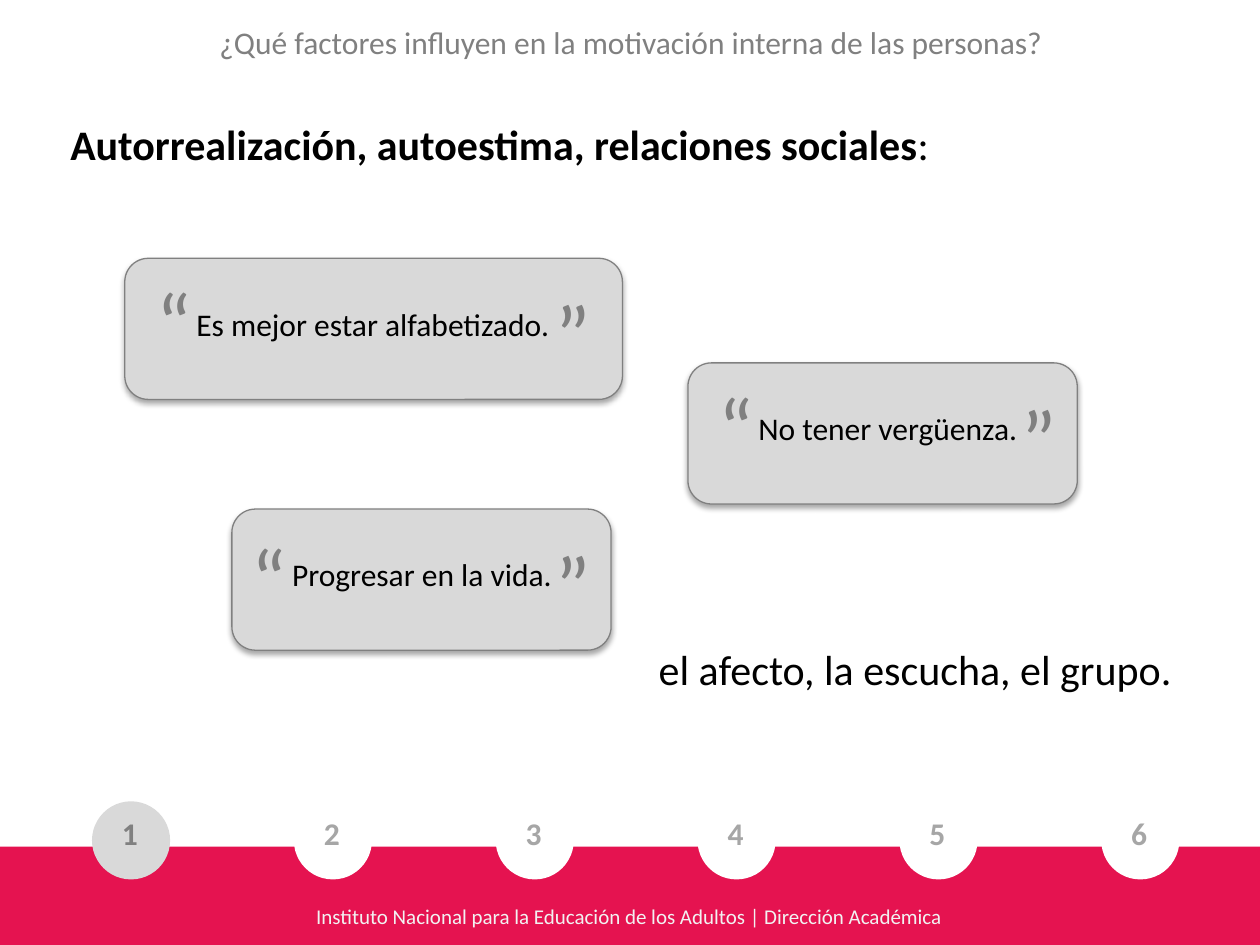
from lxml import etree
from pptx import Presentation
from pptx.dml.color import RGBColor
from pptx.enum.shapes import MSO_SHAPE
from pptx.enum.text import MSO_ANCHOR, MSO_AUTO_SIZE, PP_ALIGN
from pptx.oxml.ns import qn
from pptx.util import Pt

PX = 9144  # 100 px to the inch
RECTANGLE = MSO_SHAPE.RECTANGLE
OVAL = MSO_SHAPE.OVAL
ROUNDED = MSO_SHAPE.ROUNDED_RECTANGLE
LEFT, CENTER = PP_ALIGN.LEFT, PP_ALIGN.CENTER
TOP = MSO_ANCHOR.TOP
NO_AUTOFIT = MSO_AUTO_SIZE.NONE

FONT = "Calibri"
BLACK, WHITE = "000000", "FFFFFF"
GRAY, LIGHT_GRAY, PALE_GRAY = "808080", "D9D9D9", "A6A6A6"
CRIMSON, OFF_WHITE = "E51350", "F2F2F2"


def color(value):
    return RGBColor.from_string(value)


def emu(*lengths):
    return [round(length * PX) for length in lengths]


def write(shape, runs, size, text_color, align=LEFT, wrap=False):
    """Fill a shape with one paragraph of (text, bold) runs."""
    frame = shape.text_frame
    frame.word_wrap = wrap
    frame.auto_size = NO_AUTOFIT
    frame.vertical_anchor = TOP
    paragraph = frame.paragraphs[0]
    paragraph.alignment = align
    for text, bold in runs:
        run = paragraph.add_run()
        run.text = text
        run.font.name = FONT
        run.font.size = Pt(size)
        run.font.bold = bold
        run.font.color.rgb = color(text_color)


def add_text(slide, box, text, size, text_color, bold=False, align=LEFT, wrap=False):
    text_box = slide.shapes.add_textbox(*emu(*box))
    write(text_box, [(text, bold)], size, text_color, align, wrap)


def add_shape(slide, kind, box, fill):
    shape = slide.shapes.add_shape(kind, *emu(*box))
    shape.shadow.inherit = False
    shape.fill.solid()
    shape.fill.fore_color.rgb = color(fill)
    shape.line.fill.background()
    return shape


def add_soft_shadow(shape):
    effects = shape.element.spPr.find(qn("a:effectLst"))
    shadow = etree.SubElement(effects, qn("a:outerShdw"), blurRad="40000",
                              dist="23000", dir="5400000", rotWithShape="0")
    shade = etree.SubElement(shadow, qn("a:srgbClr"), val=BLACK)
    etree.SubElement(shade, qn("a:alpha"), val="35000")


def build_title(slide, box):
    title = slide.shapes.title
    title.left, title.top, title.width, title.height = emu(*box)
    write(title, [("¿Qué factores influyen en la motivación interna de las personas?", False)],
          18, GRAY)


def build_heading(slide, box):
    heading = slide.shapes.add_textbox(*emu(*box))
    write(heading, [("Autorrealización, autoestima, relaciones sociales", True), (":", False)],
          24, BLACK, wrap=True)


def build_quote(slide, box, text, text_offset, text_width, mark_offset):
    """Shadowed card with a sentence between two large quotation marks."""
    left, top = box[:2]
    card = add_shape(slide, ROUNDED, box, LIGHT_GRAY)
    card.line.color.rgb = color(GRAY)
    card.line.width = Pt(0.75)
    add_soft_shadow(card)
    text_left = left + text_offset
    add_text(slide, (text_left, top + 32, text_width, 40), text, 18, BLACK)
    add_text(slide, (text_left - 32, top + mark_offset, 48, 91), "“", 48, GRAY)
    add_text(slide, (text_left + text_width - 20, top + 13, 48, 91), "”", 48, GRAY)


def build_footer(slide, box):
    """Band with six numbered steps on its upper edge; the first is active."""
    left, top, width, height = box
    add_shape(slide, RECTANGLE, box, CRIMSON)
    for index in range(6):
        active = index == 0
        circle_left = left + 73 + index * 160.2
        add_shape(slide, OVAL, (circle_left, top - 36, 62, 62),
                  LIGHT_GRAY if active else WHITE)
        add_text(slide, (circle_left + 14, top - 31, 33, 40), str(index + 1), 18,
                 GRAY if active else PALE_GRAY, bold=True)
    add_text(slide, (left + 133, top + 40, width - 267, 30),
             "Instituto Nacional para la Educación de los Adultos | Dirección Académica",
             12, OFF_WHITE, align=CENTER, wrap=True)


def main():
    presentation = Presentation()
    presentation.slide_width, presentation.slide_height = emu(1000, 750)
    slide = presentation.slides.add_slide(presentation.slide_layouts[5])

    build_title(slide, (164, 13, 683, 40))
    build_heading(slide, (46, 89, 900, 66))
    build_footer(slide, (0, 672, 1000, 78))

    # Card box, sentence, sentence offset and width, opening mark offset
    quotes = [
        ((99, 205, 395, 112), "Es mejor estar alfabetizado.", 47, 305, 4),
        ((184, 404, 301, 112), "Progresar en la vida.", 38, 229, 8),
        ((546, 288, 309, 112), "No tener vergüenza.", 46, 229, 4),
    ]
    for quote in quotes:
        build_quote(slide, *quote)

    add_text(slide, (513, 506, 433, 91), "el afecto, la escucha, el grupo.", 24, BLACK)
    presentation.save("out.pptx")


if __name__ == "__main__":
    main()
